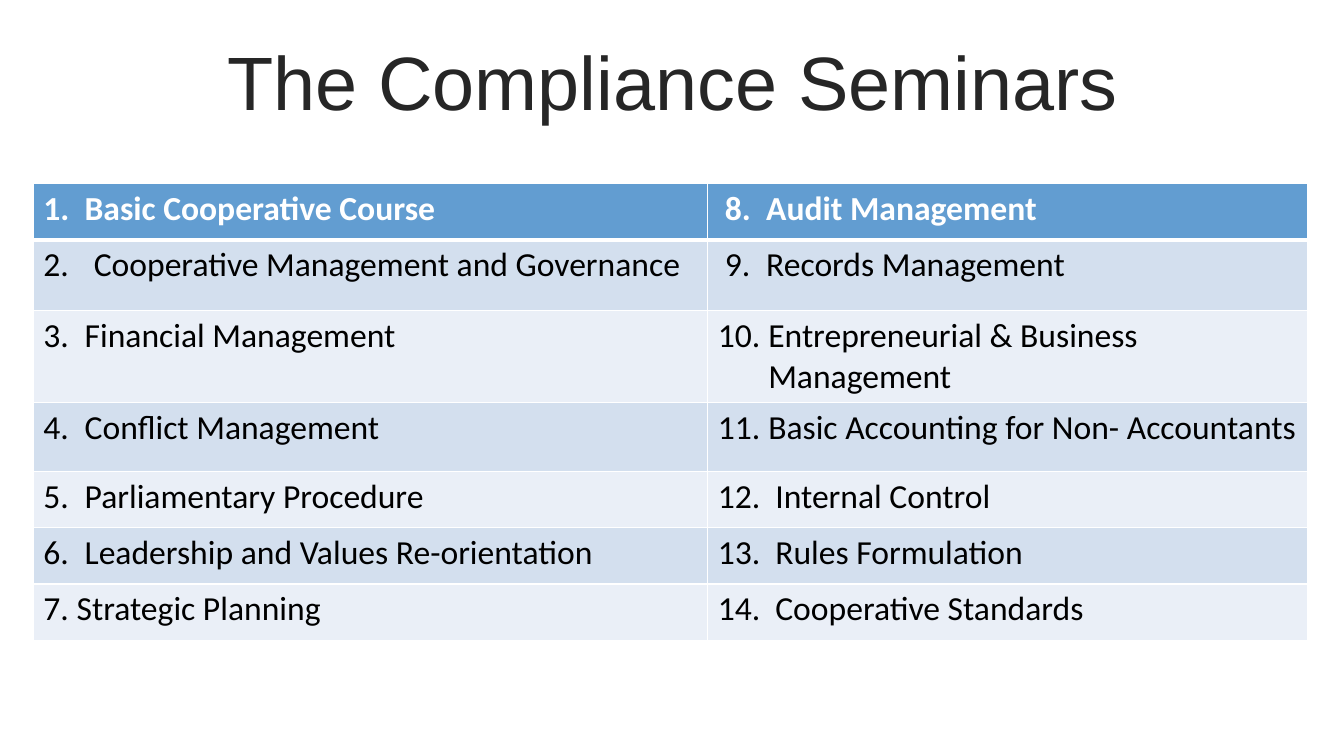
from dataclasses import dataclass

from lxml import etree
from pptx import Presentation
from pptx.dml.color import RGBColor
from pptx.enum.text import MSO_ANCHOR, PP_ALIGN
from pptx.oxml.ns import qn
from pptx.util import Inches, Pt

CENTER = PP_ALIGN.CENTER
LEFT = PP_ALIGN.LEFT
TOP = MSO_ANCHOR.TOP
MIDDLE = MSO_ANCHOR.MIDDLE
TITLE_ONLY = 5


@dataclass(frozen=True)
class Theme:
    title_font: str = "Arial"
    body_font: str = "Calibri"
    title_size: int = 54
    body_size: int = 24
    title_color: str = "262626"
    header_text: str = "FFFFFF"
    body_text: str = "000000"
    header_fill: str = "629DD1"
    bands: tuple = ("EAEFF7", "D3DFEE")
    border: str = "FFFFFF"


@dataclass(frozen=True)
class Seminar:
    number: int
    name: str
    text_start: float = 0.41
    number_start: float = 0
    auto_number: bool = False


THEME = Theme()
COLUMN_WIDTHS = (6.69, 5.95)
ROW_HEIGHTS = (0.56, 0.7, 0.8, 0.68, 0.56, 0.56, 0.56)
SEMINARS = (
    Seminar(1, "Basic Cooperative Course"),
    Seminar(2, "Cooperative Management and Governance", 0.5, auto_number=True),
    Seminar(3, "Financial Management"),
    Seminar(4, "Conflict Management"),
    Seminar(5, "Parliamentary Procedure"),
    Seminar(6, "Leadership and Values Re-orientation"),
    Seminar(7, "Strategic Planning", 0.33),
    Seminar(8, "Audit Management", 0.48, 0.07),
    Seminar(9, "Records Management", 0.48, 0.07),
    Seminar(10, "Entrepreneurial & Business Management", 0.5),
    Seminar(11, "Basic Accounting for Non- Accountants", 0.5, auto_number=True),
    Seminar(12, "Internal Control", 0.57),
    Seminar(13, "Rules Formulation", 0.57),
    Seminar(14, "Cooperative Standards", 0.57),
)


def write_text(paragraph, text, *, font, size, color, bold=False, align=LEFT, line_spacing=1.0):
    paragraph.alignment = align
    paragraph.line_spacing = line_spacing
    run = paragraph.add_run()
    run.text = text
    run.font.name = font
    run.font.size = Pt(size)
    run.font.bold = bold
    run.font.color.rgb = RGBColor.from_string(color)


def set_hanging_indent(paragraph, seminar):
    properties = paragraph._p.get_or_add_pPr()
    properties.set("marL", str(Inches(seminar.text_start)))
    properties.set("indent", str(Inches(seminar.number_start - seminar.text_start)))
    if seminar.auto_number:
        etree.SubElement(properties, qn("a:buAutoNum"), type="arabicPeriod", startAt=str(seminar.number))
    else:
        etree.SubElement(properties, qn("a:buNone"))
        stops = etree.SubElement(properties, qn("a:tabLst"))
        etree.SubElement(stops, qn("a:tab"), pos=str(Inches(seminar.text_start)), algn="l")


def set_borders(cell, top, bottom):
    properties = cell._tc.get_or_add_tcPr()
    for side, width in (("L", 1), ("R", 1), ("T", top), ("B", bottom)):
        line = etree.SubElement(properties, qn(f"a:ln{side}"), w=str(Pt(width)))
        fill = etree.SubElement(line, qn("a:solidFill"))
        etree.SubElement(fill, qn("a:srgbClr"), val=THEME.border)


def fill_cell(cell, seminar, row):
    is_header = row == 0
    set_borders(cell, 3 if row == 1 else 1, 3 if is_header else 1)
    cell.fill.solid()
    cell.fill.fore_color.rgb = RGBColor.from_string(THEME.header_fill if is_header else THEME.bands[row % 2])
    cell.vertical_anchor = TOP
    paragraph = cell.text_frame.paragraphs[0]
    set_hanging_indent(paragraph, seminar)
    write_text(
        paragraph,
        seminar.name if seminar.auto_number else f"{seminar.number}.\t{seminar.name}",
        font=THEME.body_font,
        size=THEME.body_size,
        color=THEME.header_text if is_header else THEME.body_text,
        bold=is_header,
    )


def add_title(slide, text):
    title = slide.shapes.title
    title.left, title.top = Inches(0.92), Inches(0.13)
    title.width, title.height = Inches(11.5), Inches(1.45)
    title.text_frame.vertical_anchor = MIDDLE
    write_text(
        title.text_frame.paragraphs[0],
        text,
        font=THEME.title_font,
        size=THEME.title_size,
        color=THEME.title_color,
        align=CENTER,
        line_spacing=0.9,
    )


def add_seminar_table(slide):
    row_count = len(ROW_HEIGHTS)
    table = slide.shapes.add_table(
        row_count,
        len(COLUMN_WIDTHS),
        Inches(0.33),
        Inches(1.82),
        Inches(sum(COLUMN_WIDTHS)),
        Inches(sum(ROW_HEIGHTS)),
    ).table
    for column, width in zip(table.columns, COLUMN_WIDTHS):
        column.width = Inches(width)
    for table_row, height in zip(table.rows, ROW_HEIGHTS):
        table_row.height = Inches(height)
    for index, seminar in enumerate(SEMINARS):
        column, row = divmod(index, row_count)
        fill_cell(table.cell(row, column), seminar, row)


def main():
    deck = Presentation()
    deck.slide_width, deck.slide_height = Inches(13.33), Inches(7.5)
    slide = deck.slides.add_slide(deck.slide_layouts[TITLE_ONLY])
    add_title(slide, "The Compliance Seminars")
    add_seminar_table(slide)
    deck.save("out.pptx")


if __name__ == "__main__":
    main()
